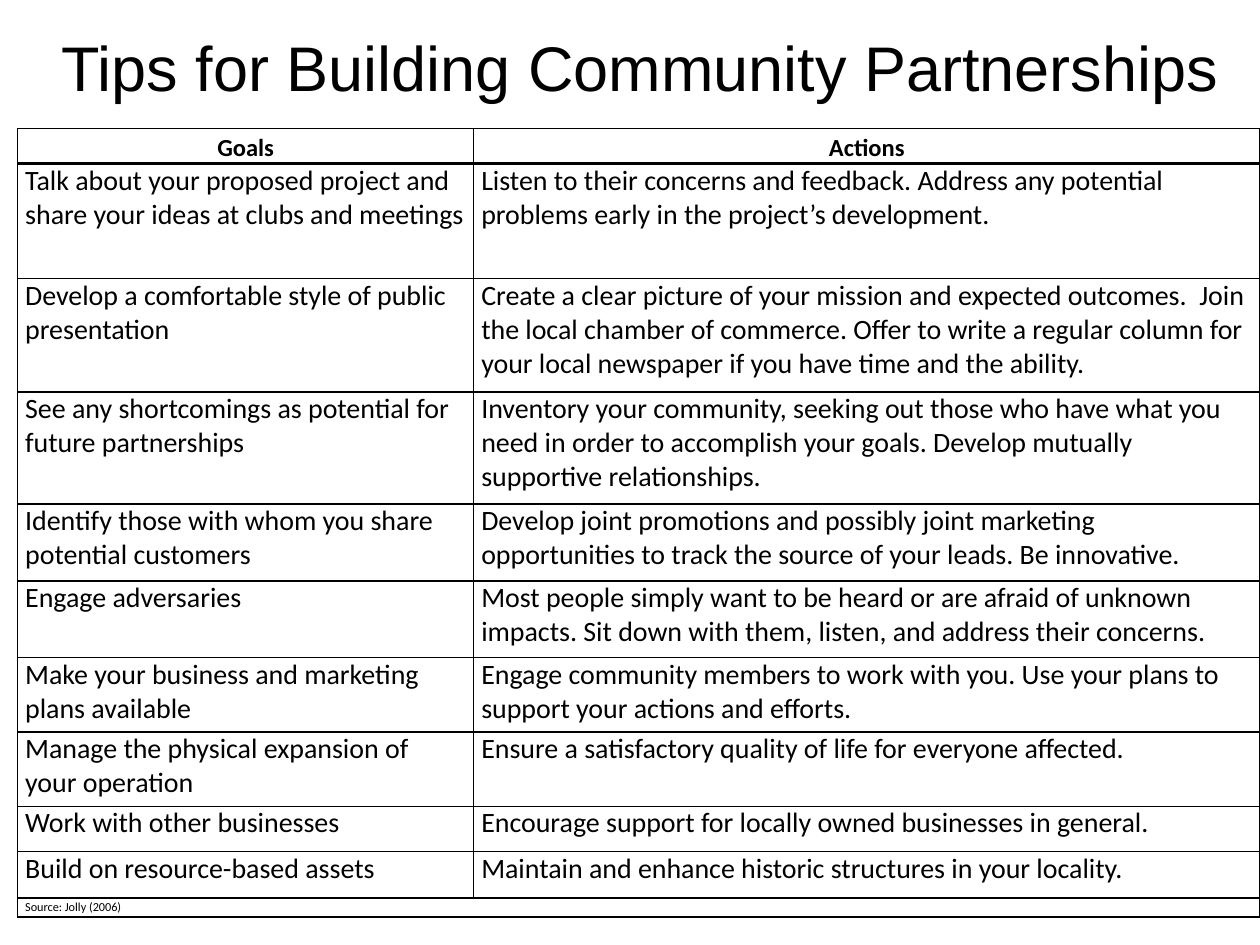
from lxml import etree
from pptx import Presentation
from pptx.dml.color import RGBColor
from pptx.enum.text import MSO_ANCHOR, MSO_AUTO_SIZE, PP_ALIGN
from pptx.oxml.ns import qn
from pptx.util import Inches, Pt

CENTER, LEFT = PP_ALIGN.CENTER, PP_ALIGN.LEFT
MIDDLE, TOP = MSO_ANCHOR.MIDDLE, MSO_ANCHOR.TOP
NO_AUTOFIT = MSO_AUTO_SIZE.NONE
BLACK, WHITE = "000000", "FFFFFF"

TITLE = "Tips for Building Community Partnerships"
HEADER = ("Goals", "Actions")
TIPS = [
    ("Talk about your proposed project and share your ideas at clubs and meetings",
     "Listen to their concerns and feedback. Address any potential problems early in the project’s development."),
    ("Develop a comfortable style of public presentation",
     "Create a clear picture of your mission and expected outcomes.  Join the local chamber of commerce. "
     "Offer to write a regular column for your local newspaper if you have time and the ability."),
    ("See any shortcomings as potential for future partnerships",
     "Inventory your community, seeking out those who have what you need in order to accomplish your goals. "
     "Develop mutually supportive relationships."),
    ("Identify those with whom you share potential customers",
     "Develop joint promotions and possibly joint marketing opportunities to track the source of your leads. "
     "Be innovative."),
    ("Engage adversaries",
     "Most people simply want to be heard or are afraid of unknown impacts. "
     "Sit down with them, listen, and address their concerns."),
    ("Make your business and marketing plans available",
     "Engage community members to work with you. Use your plans to support your actions and efforts."),
    ("Manage the physical expansion of your operation",
     "Ensure a satisfactory quality of life for everyone affected."),
    ("Work with other businesses",
     "Encourage support for locally owned businesses in general."),
    ("Build on resource-based assets",
     "Maintain and enhance historic structures in your locality."),
]
SOURCE = ("Source: Jolly (2006)", "")
ROWS = [HEADER, *TIPS, SOURCE]

COLUMN_WIDTHS = (3.62, 6.24)
ROW_HEIGHTS = (0.28, 0.91, 0.9, 0.89, 0.61, 0.61, 0.59, 0.59, 0.36, 0.37, 0.15)
BAND_OPACITY = 20

TITLE_FORMAT = {"name": "Arial", "size": Pt(36), "bold": False}
HEADER_FORMAT = {"name": "Calibri", "size": Pt(14), "bold": True}
BODY_FORMAT = {"name": "Calibri", "size": Pt(16), "bold": False}
SOURCE_FORMAT = {"name": "Calibri", "size": Pt(7), "bold": False}
CELL_FORMAT = {"margin_left": Inches(0.06), "margin_right": Inches(0.06),
               "margin_top": 0, "margin_bottom": 0, "vertical_anchor": TOP}


def color(value):
    return RGBColor.from_string(value)


def apply(target, values):
    for name, value in values.items():
        setattr(target, name, value)


def write(paragraph, text, font_format, alignment, line_spacing):
    paragraph.alignment = alignment
    paragraph.line_spacing = line_spacing
    run = paragraph.add_run()
    run.text = text
    apply(run.font, font_format)
    run.font.color.rgb = color(BLACK)


def add_border(cell, side, points):
    properties = cell._tc.get_or_add_tcPr()
    line = etree.SubElement(properties, qn(f"a:ln{side}"), w=str(Pt(points)))
    fill = etree.SubElement(line, qn("a:solidFill"))
    etree.SubElement(fill, qn("a:srgbClr"), val=BLACK)


def fill_cell(cell, opacity):
    cell.fill.solid()
    cell.fill.fore_color.rgb = color(WHITE)
    if opacity < 100:
        tone = cell._tc.tcPr.find(f"{qn('a:solidFill')}/{qn('a:srgbClr')}")
        etree.SubElement(tone, qn("a:alpha"), val=str(opacity * 1000))


def add_title(slide):
    title = slide.shapes.title
    apply(title, {"left": Inches(0.38), "top": Inches(0.14),
                  "width": Inches(9.4), "height": Inches(0.77)})
    apply(title.text_frame, {"word_wrap": True, "auto_size": NO_AUTOFIT,
                             "vertical_anchor": MIDDLE})
    write(title.text_frame.paragraphs[0], TITLE, TITLE_FORMAT, CENTER, 1.0)


def add_tips_table(slide):
    table = slide.shapes.add_table(
        len(ROWS), len(COLUMN_WIDTHS), Inches(0.14), Inches(1.02),
        Inches(sum(COLUMN_WIDTHS)), Inches(sum(ROW_HEIGHTS))).table
    apply(table, {"first_row": False, "horz_banding": False})
    for column, width in zip(table.columns, COLUMN_WIDTHS):
        column.width = Inches(width)
    for row, height in zip(table.rows, ROW_HEIGHTS):
        row.height = Inches(height)

    last = len(ROWS) - 1
    table.cell(last, 0).merge(table.cell(last, 1))
    styles = {0: (HEADER_FORMAT, CENTER, 1.15), last: (SOURCE_FORMAT, LEFT, 1.15)}
    for row_index, texts in enumerate(ROWS):
        style = styles.get(row_index, (BODY_FORMAT, LEFT, 1.0))
        banded = row_index % 2 == 1
        weights = {"L": 1, "R": 1, "T": 2 if row_index == 1 else 1,
                   "B": 2 if row_index == 0 else 1}
        for column_index, text in enumerate(texts):
            cell = table.cell(row_index, column_index)
            apply(cell, CELL_FORMAT)
            for side, points in weights.items():
                add_border(cell, side, points)
            fill_cell(cell, BAND_OPACITY if banded else 100)
            if not cell.is_spanned:
                write(cell.text_frame.paragraphs[0], text, *style)


def main():
    presentation = Presentation()
    apply(presentation, {"slide_width": Inches(10), "slide_height": Inches(7.5)})
    slide = presentation.slides.add_slide(presentation.slide_layouts[0])
    subtitle = slide.placeholders[1].element
    subtitle.getparent().remove(subtitle)
    add_title(slide)
    add_tips_table(slide)
    presentation.save("out.pptx")


if __name__ == "__main__":
    main()
